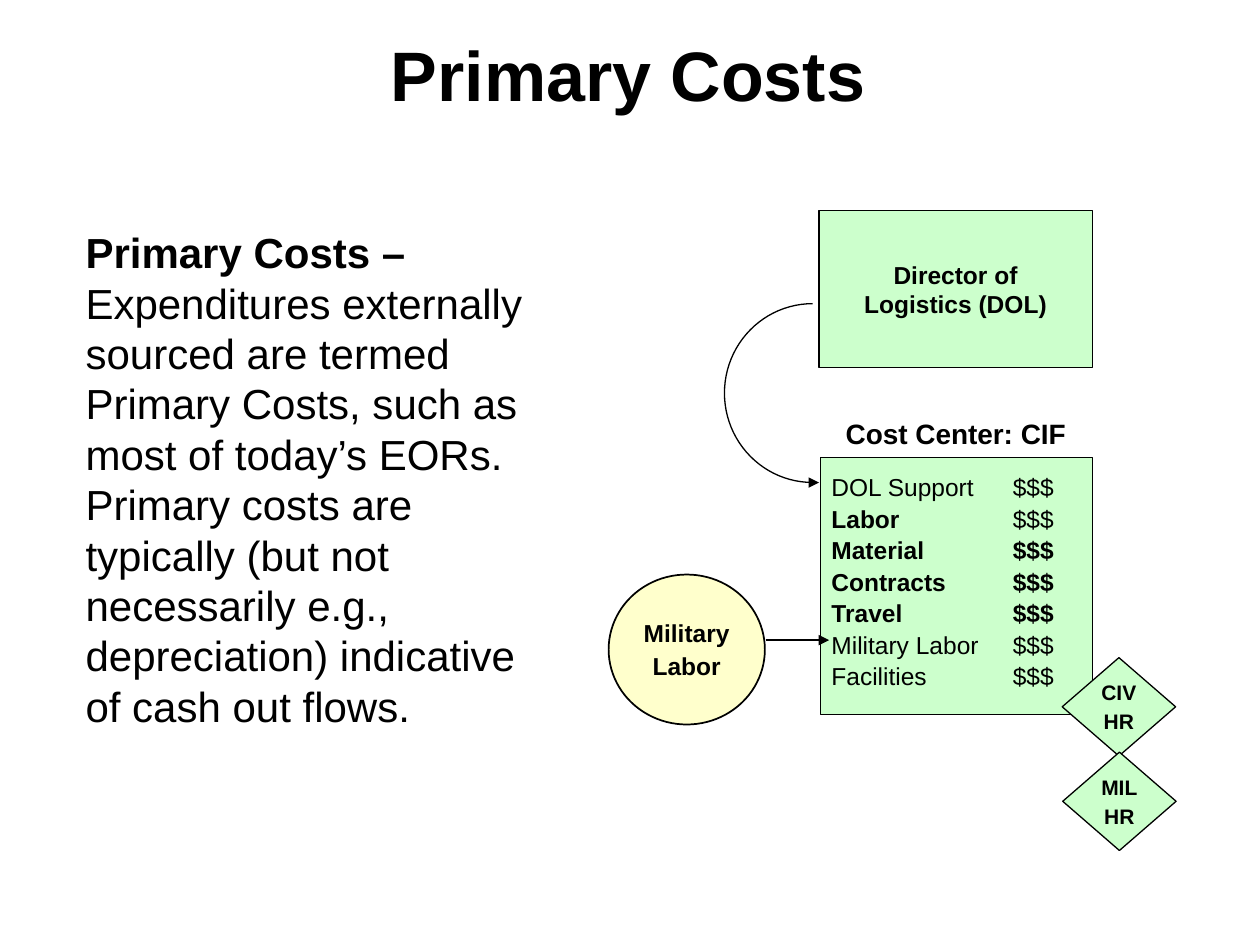
from dataclasses import dataclass

import lxml.etree
import pptx
import pptx.dml.color
import pptx.enum.shapes
import pptx.enum.text
import pptx.oxml.ns
import pptx.util

Pt = pptx.util.Pt
Shape = pptx.enum.shapes.MSO_SHAPE
Align = pptx.enum.text.PP_ALIGN
Anchor = pptx.enum.text.MSO_ANCHOR
BLACK, GREEN, YELLOW = "000000", "CCFFCC", "FFFFCC"


@dataclass
class Box:
    left: float
    top: float
    width: float
    height: float


@dataclass
class Node:
    kind: int
    box: Box
    fill: str
    text: str = ""
    size: float = 14
    space_after: float = 0
    line_width: float = 0.75


@dataclass
class CostRow:
    label: str
    bold_label: bool = False
    bold_amount: bool = False


NODES = [
    Node(Shape.RECTANGLE, Box(468.7, 261.4, 155.5, 146.9), GREEN),
    Node(Shape.DIAMOND, Box(607, 375.8, 64.8, 56.2), GREEN, "CIV\nHR", 12, 2),
    Node(Shape.OVAL, Box(347.8, 328.3, 89.3, 85.7), YELLOW, "Military\nLabor", 14, 2, 1),
    Node(Shape.RECTANGLE, Box(468, 120.2, 156.2, 90), GREEN, "Director of\nLogistics (DOL)"),
    Node(Shape.DIAMOND, Box(607.3, 429.8, 64.8, 56.2), GREEN, "MIL\nHR", 12, 2),
]

COST_ROWS = [
    CostRow("DOL Support"),
    CostRow("Labor", True),
    CostRow("Material", True, True),
    CostRow("Contracts", True, True),
    CostRow("Travel", True, True),
    CostRow("Military Labor"),
    CostRow("Facilities"),
]
ROW_TOP, ROW_PITCH = 270, 18


def rgb(value: str) -> pptx.dml.color.RGBColor:
    return pptx.dml.color.RGBColor.from_string(value)


def add_child(parent, tag: str, **attributes: str):
    return lxml.etree.SubElement(parent, pptx.oxml.ns.qn(tag), attributes)


def lengths(box: Box) -> list:
    return [Pt(value) for value in (box.left, box.top, box.width, box.height)]


def format_run(run, size: float, bold: bool) -> None:
    run.font.name = "Arial"
    run.font.size = Pt(size)
    run.font.bold = bold
    run.font.color.rgb = rgb(BLACK)


def format_paragraphs(frame, size: float, bold: bool, space_after: float) -> None:
    for paragraph in frame.paragraphs:
        paragraph.alignment = Align.CENTER
        paragraph.space_after = Pt(space_after)
        for run in paragraph.runs:
            format_run(run, size, bold)


def add_text_frame(slide, box: Box, inset: float):
    frame = slide.shapes.add_textbox(*lengths(box)).text_frame
    frame.word_wrap = True
    frame.margin_top = frame.margin_bottom = Pt(inset)
    return frame


def add_heading(slide, box: Box, text: str, size: float, inset: float) -> None:
    frame = add_text_frame(slide, box, inset)
    frame.text = text
    format_paragraphs(frame, size, True, 0)


def add_lead_text(frame, lead: str, rest: str, size: float,
                  lead_bold: bool, rest_bold: bool) -> None:
    paragraph = frame.paragraphs[0]
    for text, bold in ((lead, lead_bold), (rest, rest_bold)):
        run = paragraph.add_run()
        run.text = text
        format_run(run, size, bold)


def add_node(slide, node: Node) -> None:
    shape = slide.shapes.add_shape(node.kind, *lengths(node.box))
    shape.shadow.inherit = False
    shape.fill.solid()
    shape.fill.fore_color.rgb = rgb(node.fill)
    shape.line.color.rgb = rgb(BLACK)
    shape.line.width = Pt(node.line_width)
    if node.text:
        frame = shape.text_frame
        frame.word_wrap = False
        frame.vertical_anchor = Anchor.MIDDLE
        frame.text = node.text
        format_paragraphs(frame, node.size, True, node.space_after)


def add_arrow(slide, start: float, end: float, level: float, width: float) -> None:
    arrow = slide.shapes.add_connector(
        pptx.enum.shapes.MSO_CONNECTOR.STRAIGHT,
        Pt(start), Pt(level), Pt(end), Pt(level))
    arrow.line.color.rgb = rgb(BLACK)
    arrow.line.width = Pt(width)
    add_child(arrow.line._get_or_add_ln(), "a:tailEnd", type="triangle")
    add_child(arrow._element.spPr, "a:effectLst")


def add_support_curve(slide, box: Box) -> None:
    curve = slide.shapes.add_shape(Shape.ARC, *lengths(box))
    curve.shadow.inherit = False
    curve.fill.background()
    curve.line.color.rgb = rgb(BLACK)
    curve.line.width = Pt(0.75)
    curve.adjustments[0] = 54
    curve.adjustments[1] = 162


def add_cost_row(slide, row: CostRow, top: float) -> None:
    frame = add_text_frame(slide, Box(468, top, 174.2, 16.6), 0)
    tabs = add_child(frame.paragraphs[0]._p.get_or_add_pPr(), "a:tabLst")
    add_child(tabs, "a:tab", pos=str(Pt(103.7)), algn="l")
    add_lead_text(frame, row.label, "\t$$$", 14, row.bold_label, row.bold_amount)


def main() -> None:
    deck = pptx.Presentation()
    deck.slide_width, deck.slide_height = Pt(720), Pt(540)
    slide = deck.slides.add_slide(deck.slide_layouts[6])

    definition = add_text_frame(slide, Box(41.8, 126, 282.2, 294.5), 3.6)
    add_lead_text(
        definition, "Primary Costs – ",
        "Expenditures externally sourced are termed Primary Costs, such as most of "
        "today’s EORs. Primary costs are typically (but not necessarily e.g., "
        "depreciation) indicative of cash out flows.", 24, True, False)
    add_heading(slide, Box(95, 18, 527.8, 65.5), "Primary Costs", 40, 0)
    add_heading(slide, Box(473.8, 234.7, 144.7, 26.6), "Cost Center: CIF", 16, 3.6)

    for node in NODES:
        add_node(slide, node)
    add_support_curve(slide, Box(414, 173.5, 100.8, 102.2))
    add_arrow(slide, 462.2, 468, 275.8, 0.75)
    add_arrow(slide, 437.8, 473.8, 365.8, 1)
    for index, row in enumerate(COST_ROWS):
        add_cost_row(slide, row, ROW_TOP + index * ROW_PITCH)

    deck.save("out.pptx")


if __name__ == "__main__":
    main()
